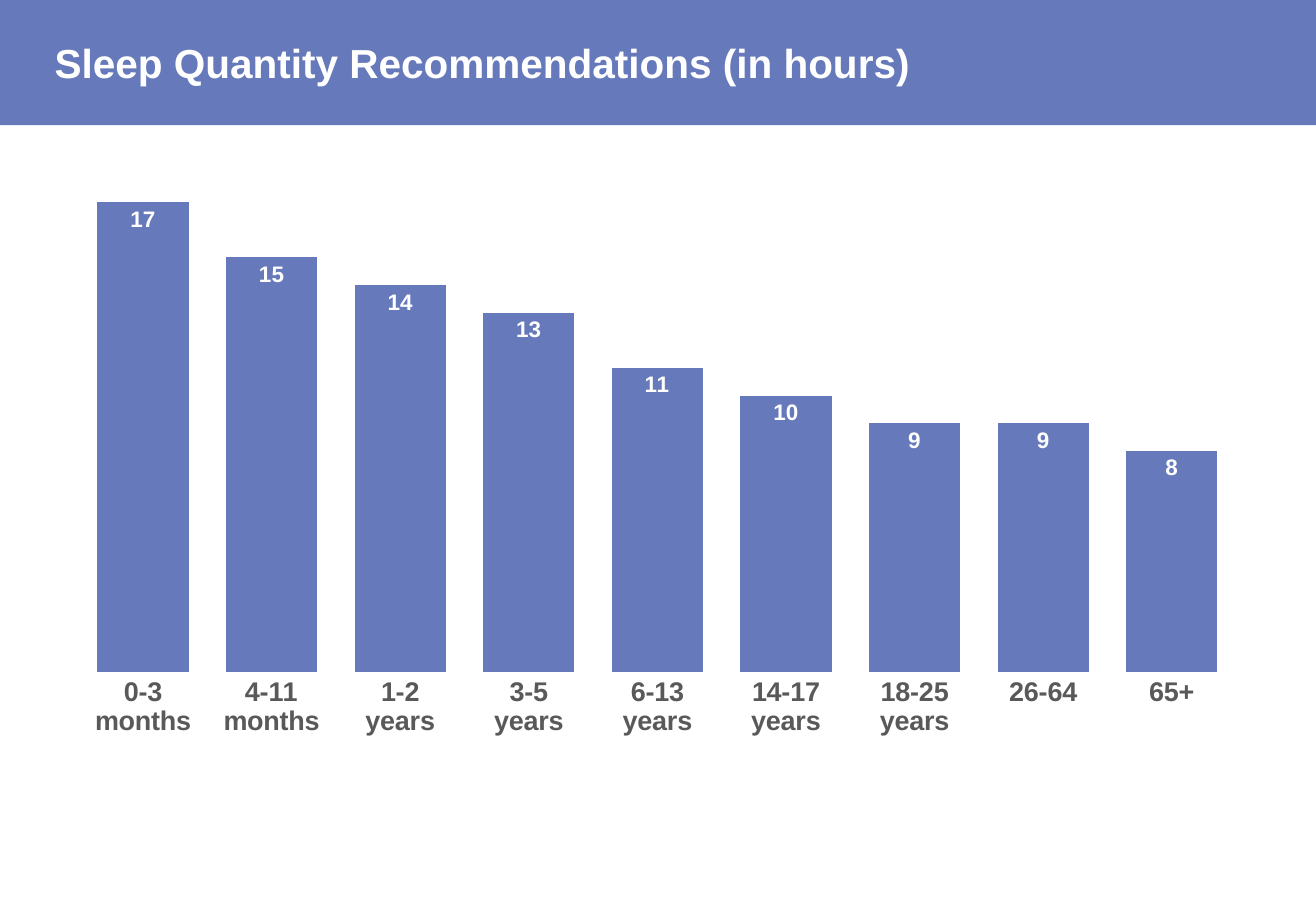
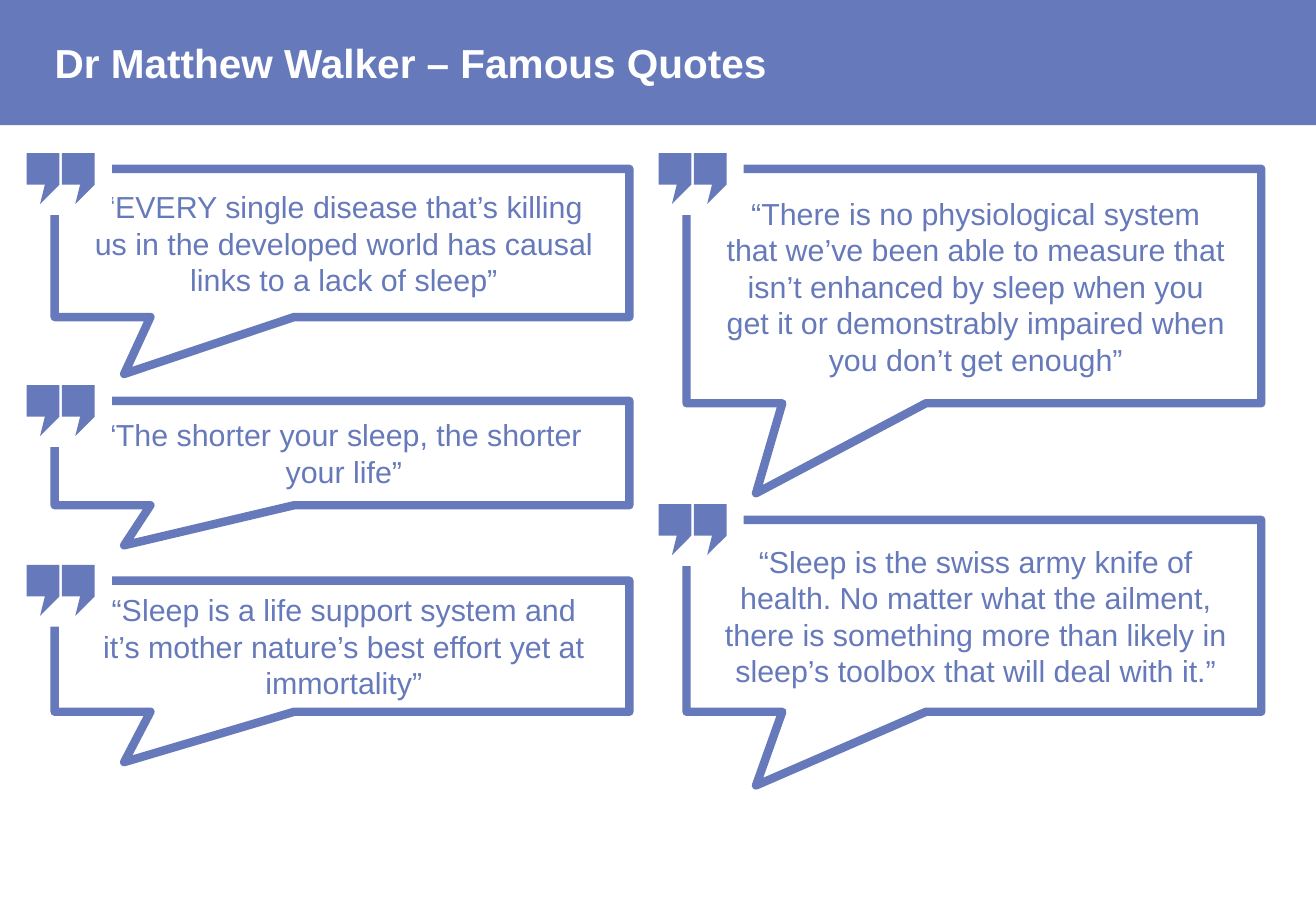
"""Build two slides on sleep: a chart of recommended hours and a page of quotes."""
from pptx import Presentation
from pptx.chart.data import CategoryChartData
from pptx.dml.color import RGBColor
from pptx.enum.chart import XL_CHART_TYPE as ChartType
from pptx.enum.chart import XL_LABEL_POSITION as LabelPosition
from pptx.enum.chart import XL_TICK_MARK as TickMark
from pptx.enum.shapes import MSO_SHAPE as Shape
from pptx.enum.text import MSO_ANCHOR as Anchor
from pptx.enum.text import MSO_AUTO_SIZE as AutoSize
from pptx.enum.text import PP_ALIGN as Align
from pptx.util import Inches, Pt

BLUE = RGBColor(0x66, 0x79, 0xBA)
WHITE = RGBColor(0xFF, 0xFF, 0xFF)
GREY = RGBColor(0x59, 0x59, 0x59)
FONT = "Arial"
PAGE_WIDTH, PAGE_HEIGHT = 10.83, 7.5
BAND_HEIGHT = 1.03

CHART_TITLE = "Sleep Quantity Recommendations (in hours)"
HOURS = [
    ("0-3\nmonths", 17),
    ("4-11\nmonths", 15),
    ("1-2\nyears", 14),
    ("3-5\nyears", 13),
    ("6-13\nyears", 11),
    ("14-17\nyears", 10),
    ("18-25\nyears", 9),
    ("26-64", 9),
    ("65+", 8),
]

QUOTES_TITLE = "Dr Matthew Walker – Famous Quotes"
LEFT_COLUMN, RIGHT_COLUMN = 0.45, 5.65
CALLOUT_WIDTH = 4.73
QUOTES = [
    (LEFT_COLUMN, 1.39, 1.22, "“EVERY single disease that’s killing us in the developed "
     "world has causal links to a lack of sleep”"),
    (LEFT_COLUMN, 3.3, 0.86, "“The shorter your sleep, the shorter your life”"),
    (LEFT_COLUMN, 4.78, 1.08, "“Sleep is a life support system and it’s mother nature’s "
     "best effort yet at immortality”"),
    (RIGHT_COLUMN, 1.39, 1.93, "“There is no physiological\u00a0system that we’ve been able to "
     "measure that isn’t enhanced by sleep when you get it or demonstrably "
     "impaired when you don’t get enough”"),
    (RIGHT_COLUMN, 4.28, 1.58, "“Sleep is the swiss army knife of health. No matter what the "
     "ailment, there is something more than likely in sleep’s toolbox that will "
     "deal with it.”"),
]
QUOTE_MARK = [(0, 0), (0.27, 0), (0.27, 0.26), (0.11, 0.42), (0.15, 0.26), (0, 0.26)]
QUOTE_MARK_STEP = 0.29


def set_font(font, size, color, bold=False):
    font.name, font.size, font.bold = FONT, Pt(size), bold
    font.color.rgb = color


def set_insets(frame, left, top, right, bottom):
    frame.margin_left, frame.margin_top = Inches(left), Inches(top)
    frame.margin_right, frame.margin_bottom = Inches(right), Inches(bottom)


def write(frame, text, align, size, color, bold=False):
    frame.word_wrap = True
    frame.auto_size = AutoSize.NONE
    frame.vertical_anchor = Anchor.MIDDLE
    para = frame.paragraphs[0]
    para.alignment = align
    span = para.add_run()
    span.text = text
    set_font(span.font, size, color, bold)


def fill_plain(shape, color):
    shape.shadow.inherit = False
    shape.fill.solid()
    shape.fill.fore_color.rgb = color
    shape.line.fill.background()


def add_box(shapes, kind, left, top, width, height):
    return shapes.add_shape(kind, Inches(left), Inches(top), Inches(width), Inches(height))


def add_page(deck, layout, title):
    page = deck.slides.add_slide(layout)
    box = page.shapes.title
    box.left, box.top = Inches(0.45), Inches(0.12)
    box.width, box.height = Inches(9.94), Inches(0.79)
    set_insets(box.text_frame, 0, 0, 0, 0)
    write(box.text_frame, title, Align.LEFT, 24, WHITE, True)
    return page


def put_band_on_layout(page, layout):
    band = add_box(page.shapes, Shape.RECTANGLE, 0, 0, PAGE_WIDTH, BAND_HEIGHT)
    fill_plain(band, BLUE)
    layout.shapes.element.insert(2, band.element)


def add_hours_chart(page):
    data = CategoryChartData()
    data.categories = [age for age, hours in HOURS]
    data.add_series("Series 1", [hours for age, hours in HOURS])
    chart = page.shapes.add_chart(
        ChartType.COLUMN_CLUSTERED,
        Inches(0.45), Inches(1.34), Inches(9.92), Inches(4.81), data).chart
    chart.has_legend = chart.has_title = False
    set_font(chart.font, 10, WHITE)

    ages = chart.category_axis
    ages.major_tick_mark = ages.minor_tick_mark = TickMark.NONE
    ages.has_major_gridlines = False
    ages.format.line.fill.background()
    set_font(ages.tick_labels.font, 16, GREY, True)

    scale = chart.value_axis
    scale.visible = scale.has_major_gridlines = False
    scale.minimum_scale, scale.maximum_scale = 0, 18

    plot = chart.plots[0]
    plot.gap_width = 41
    plot.vary_by_categories = False
    bars = plot.series[0]
    bars.format.fill.solid()
    bars.format.fill.fore_color.rgb = BLUE
    labels = bars.data_labels
    labels.show_value = True
    labels.position = LabelPosition.INSIDE_END
    set_font(labels.font, 13.3, WHITE, True)


def add_quote_marks(shapes, left, top):
    outlines = [
        [(Inches(left + shift + x), Inches(top + y)) for x, y in QUOTE_MARK]
        for shift in (0, QUOTE_MARK_STEP)
    ]
    builder = shapes.build_freeform(*outlines[0][0])
    builder.add_line_segments(outlines[0][1:])
    builder.move_to(*outlines[1][0])
    builder.add_line_segments(outlines[1][1:])
    fill_plain(builder.convert_to_shape(), BLUE)


def add_quote(page, left, top, height, text):
    shapes = page.shapes.add_group_shape().shapes
    callout = add_box(shapes, Shape.RECTANGULAR_CALLOUT, left, top, CALLOUT_WIDTH, height)
    callout.adjustments[0], callout.adjustments[1] = -0.379, 0.884
    callout.shadow.inherit = False
    callout.fill.background()
    callout.line.color.rgb = BLUE
    callout.line.width = Pt(5)
    set_insets(callout.text_frame, 0.31, 0.05, 0.28, 0.05)
    write(callout.text_frame, text, Align.CENTER, 18, BLUE)

    corner = add_box(shapes, Shape.RECTANGLE, left - 0.12, top - 0.08, 0.59, 0.46)
    fill_plain(corner, WHITE)
    add_quote_marks(shapes, left - 0.23, top - 0.13)


def main():
    deck = Presentation()
    deck.slide_width, deck.slide_height = Inches(PAGE_WIDTH), Inches(PAGE_HEIGHT)
    layout = deck.slide_layouts.get_by_name("Title Only")

    chart_page = add_page(deck, layout, CHART_TITLE)
    put_band_on_layout(chart_page, layout)
    add_hours_chart(chart_page)

    quotes_page = add_page(deck, layout, QUOTES_TITLE)
    for quote in QUOTES:
        add_quote(quotes_page, *quote)

    deck.save("out.pptx")


if __name__ == "__main__":
    main()
